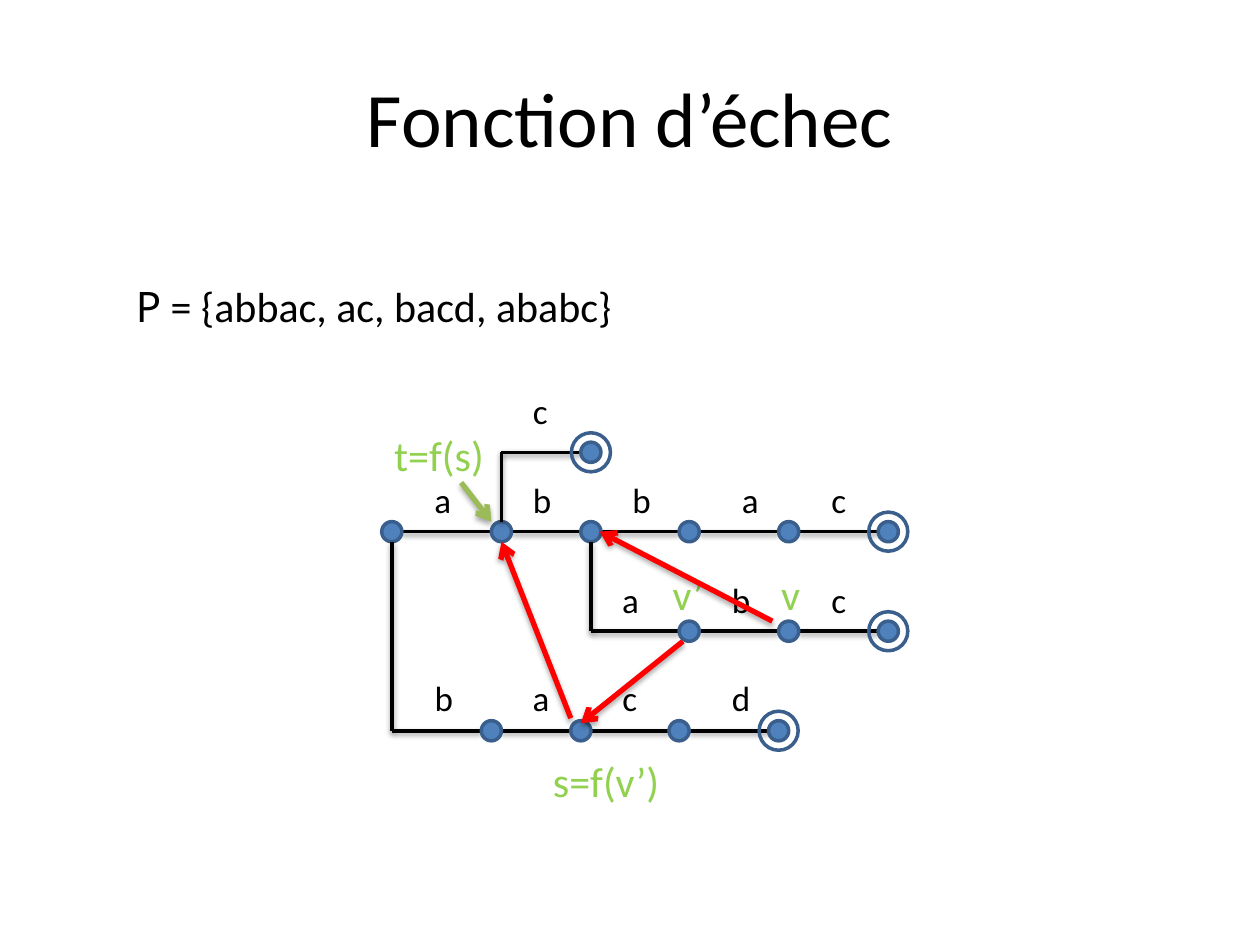
from itertools import pairwise

from lxml.etree import SubElement
from pptx import Presentation
from pptx.dml.color import RGBColor
from pptx.enum.shapes import MSO_CONNECTOR, MSO_SHAPE
from pptx.enum.text import MSO_ANCHOR, MSO_AUTO_SIZE, PP_ALIGN
from pptx.oxml.ns import qn
from pptx.util import Inches, Pt

THEME = {
    "font": "Calibri", "set_font": "Noto Sans",
    "title": 44, "note": 24, "letter": 20, "thin": 2, "thick": 3,
    "ink": "000000", "node": "4F81BD", "outline": "3A5F8C",
    "green": "92D050", "olive": "9BBB59", "red": "FF0000",
}
TITLE = "Fonction d’échec"
PATTERNS = [("P", THEME["set_font"]), (" = {abbac, ac, bacd, ababc}", THEME["font"])]

NODE, RING = 0.16, 0.31
RADIUS = NODE / 2
LETTER_WIDTHS = {"a": 0.34, "b": 0.35, "c": 0.32, "d": 0.35}
TRUNK_Y = 4.22
# Each branch: height, top of its letters, node centres, (letter, left) pairs.
# The first centre is a node on the trunk; the trunk itself starts at the root.
BRANCHES = [
    (TRUNK_Y, 3.75, [3.11, 3.98, 4.69, 5.47, 6.26, 7.05],
     [("a", 3.35), ("b", 4.13), ("b", 4.92), ("a", 5.79), ("c", 6.5)]),
    (3.59, 3.04, [3.98, 4.69], [("c", 4.13)]),
    (5.8, 5.32, [3.11, 3.9, 4.61, 5.39, 6.18],
     [("b", 3.35), ("a", 4.13), ("c", 4.84), ("d", 5.71)]),
    (5.01, 4.54, [4.69, 5.47, 6.26, 7.05],
     [("a", 4.84), ("b", 5.71), ("c", 6.5)]),
]
NOTES = [  # text, left, top, width
    ("v", 6.1, 4.46, 0.35),
    ("v’", 5.24, 4.46, 0.45),
    ("s=f(v’)", 4.29, 5.95, 1.06),
    ("t=f(s)", 3.03, 3.36, 0.92),
]
ARROWS = [  # from, to, colour
    ((5.42, 5.09), (4.61, 5.74), "red"),
    ((4.53, 5.7), (3.98, 4.3), "red"),
    ((6.13, 4.93), (4.76, 4.22), "red"),
    ((3.66, 3.83), (3.9, 4.14), "olive"),
]


def rgb(name):
    return RGBColor.from_string(THEME[name])


def add_text(page, runs, left, top, width, height, size, color):
    box = page.shapes.add_textbox(*map(Inches, (left, top, width, height)))
    frame = box.text_frame
    frame.word_wrap = False
    frame.auto_size = MSO_AUTO_SIZE.SHAPE_TO_FIT_TEXT
    para = frame.paragraphs[0]
    para.font.size = Pt(THEME[size])
    para.font.color.rgb = rgb(color)
    for text, font in runs:
        span = para.add_run()
        span.text = text
        span.font.name = font


def add_line(page, start, end, color="ink", weight="thin", arrow=False):
    """Draw a straight line with a soft shadow below it."""
    line = page.shapes.add_connector(
        MSO_CONNECTOR.STRAIGHT, *map(Inches, (*start, *end)))
    line.line.color.rgb = rgb(color)
    line.line.width = Pt(THEME[weight])
    if arrow:
        SubElement(line.line._get_or_add_ln(), qn("a:tailEnd"), type="arrow")
    effects = SubElement(line._element.spPr, qn("a:effectLst"))
    shadow = SubElement(
        effects, qn("a:outerShdw"), blurRad=str(Pt(3.1)),
        dist=str(Pt(1.8 if arrow else 1.6)), dir="5400000", rotWithShape="0")
    shade = SubElement(shadow, qn("a:srgbClr"), val=THEME["ink"])
    SubElement(shade, qn("a:alpha"), val="35000" if arrow else "38000")


def add_circle(page, x, y, size, filled):
    circle = page.shapes.add_shape(
        MSO_SHAPE.OVAL, Inches(x - size / 2), Inches(y - size / 2),
        Inches(size), Inches(size))
    circle.shadow.inherit = False
    circle.line.color.rgb = rgb("outline")
    circle.line.width = Pt(THEME["thin"])
    if filled:
        circle.fill.solid()
        circle.fill.fore_color.rgb = rgb("node")
    else:
        circle.fill.background()


def add_branch(page, y, letter_top, centres, letters):
    is_trunk = y == TRUNK_Y
    if not is_trunk:
        root_edge = TRUNK_Y + (RADIUS if y > TRUNK_Y else -RADIUS)
        add_line(page, (centres[0], root_edge), (centres[0], y))
    for index, (x1, x2) in enumerate(pairwise(centres)):
        leaves_corner = index == 0 and not is_trunk
        start = x1 if leaves_corner else x1 + RADIUS
        add_line(page, (start, y), (x2 - RADIUS, y))
    for x in centres if is_trunk else centres[1:]:
        add_circle(page, x, y, NODE, filled=True)
    add_circle(page, centres[-1], y, RING, filled=False)
    for letter, left in letters:
        add_text(page, [(letter, THEME["font"])], left, letter_top,
                 LETTER_WIDTHS[letter], 0.44, "letter", "ink")


def add_title(page):
    title = page.shapes.title
    title.left, title.top, title.width, title.height = map(
        Inches, (0.5, 0.3, 9, 1.25))
    title.text_frame.text = TITLE
    title.text_frame.vertical_anchor = MSO_ANCHOR.MIDDLE
    para = title.text_frame.paragraphs[0]
    para.alignment = PP_ALIGN.CENTER
    para.font.name = THEME["font"]
    para.font.size = Pt(THEME["title"])
    para.font.color.rgb = rgb("ink")


def main():
    deck = Presentation()
    deck.slide_width, deck.slide_height = Inches(10), Inches(7.5)
    page = deck.slides.add_slide(deck.slide_layouts.get_by_name("Title Only"))
    add_title(page)
    add_text(page, PATTERNS, 0.98, 2.18, 4.07, 0.5, "note", "ink")
    for branch in BRANCHES:
        add_branch(page, *branch)
    for text, left, top, width in NOTES:
        add_text(page, [(text, THEME["font"])], left, top, width, 0.5,
                 "note", "green")
    for start, end, color in ARROWS:
        add_line(page, start, end, color, "thick", arrow=True)
    deck.save("out.pptx")


if __name__ == "__main__":
    main()
